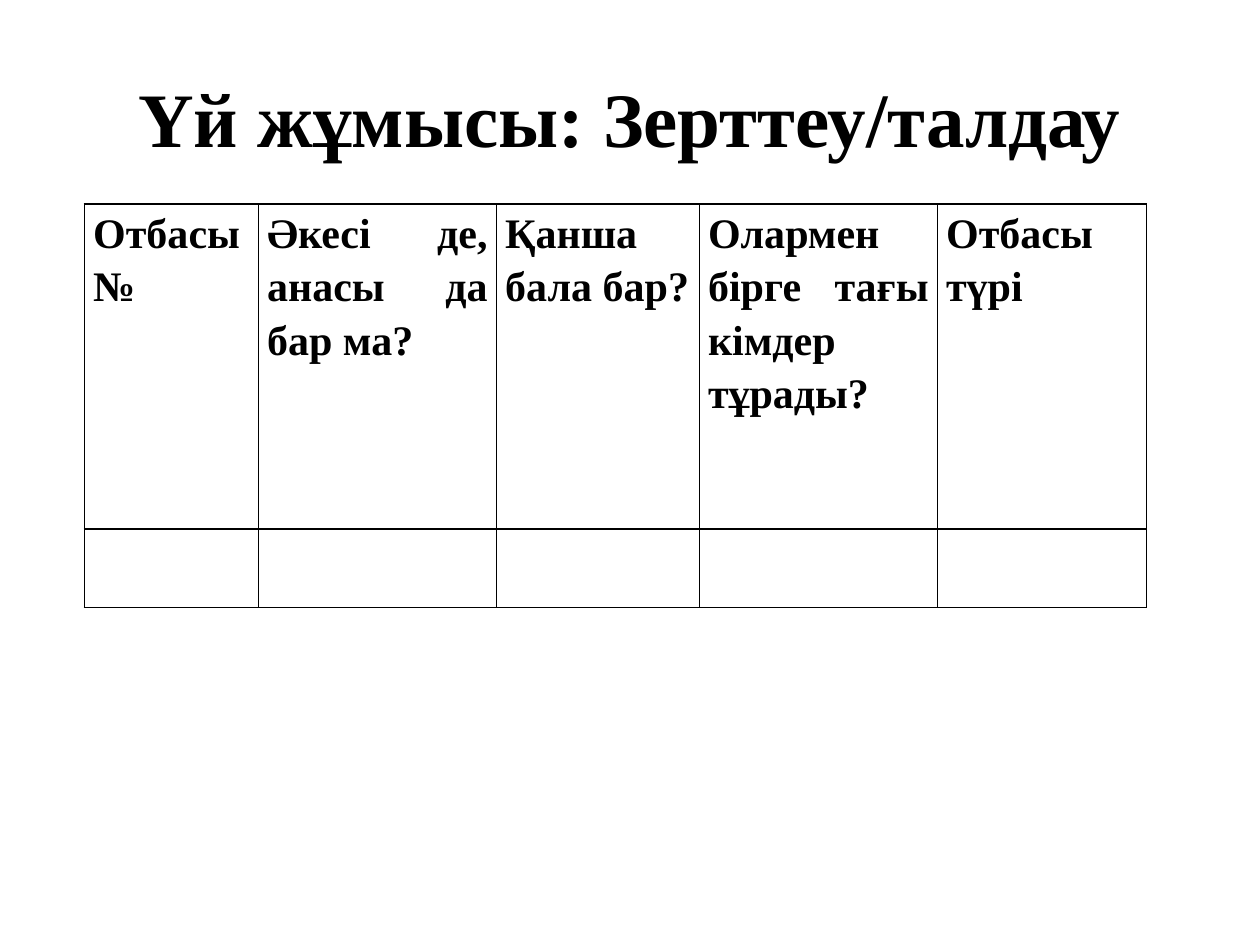
from lxml.etree import SubElement
from pptx import Presentation
from pptx.dml.color import RGBColor
from pptx.enum.text import MSO_ANCHOR, PP_ALIGN
from pptx.oxml.ns import qn
from pptx.util import Inches, Pt

COLORS = {"text": "000000", "border": "000000"}
TITLE_FONT = {"name": "Times New Roman", "size": Pt(44), "bold": True}
CELL_FONT = {"name": "Times New Roman", "size": Pt(24), "bold": True}
CELL_MARGINS = {
    "margin_left": Inches(0.07),
    "margin_right": Inches(0.07),
    "margin_top": 0,
    "margin_bottom": 0,
}
HEADERS = [
    ["Отбасы", "№"],
    ["Әкесі де, анасы да бар ма?"],
    ["Қанша бала бар?"],
    ["Олармен бірге тағы кімдер тұрады?"],
    ["Отбасы түрі"],
]
COLUMN_WIDTHS = [1.38, 1.89, 1.61, 1.89, 1.66]
ROW_HEIGHTS = [2.58, 0.62]


def set_values(target, values):
    for name, value in values.items():
        setattr(target, name, value)


def write_span(para, text, font):
    span = para.add_run()
    span.text = text
    set_values(span.font, font)
    span.font.color.rgb = RGBColor.from_string(COLORS["text"])


def add_title(page, text):
    title = page.shapes.title
    set_values(title, {"left": Inches(0.5), "top": Inches(0.3),
                       "width": Inches(9), "height": Inches(1.25)})
    title.text_frame.vertical_anchor = MSO_ANCHOR.MIDDLE
    para = title.text_frame.paragraphs[0]
    para.alignment = PP_ALIGN.CENTER
    write_span(para, text, TITLE_FONT)


def add_borders(cell):
    properties = cell._tc.get_or_add_tcPr()
    for position, side in enumerate(("a:lnL", "a:lnR", "a:lnT", "a:lnB")):
        line = SubElement(properties, qn(side), w=str(Pt(1)))
        fill = SubElement(line, qn("a:solidFill"))
        SubElement(fill, qn("a:srgbClr"), val=COLORS["border"])
        properties.remove(line)
        properties.insert(position, line)


def fill_cell(cell, lines):
    frame = cell.text_frame
    for number, text in enumerate(lines):
        para = frame.add_paragraph() if number else frame.paragraphs[0]
        para.alignment = PP_ALIGN.JUSTIFY
        para.line_spacing = 1.15
        write_span(para, text, CELL_FONT)


def add_family_table(page):
    table = page.shapes.add_table(
        len(ROW_HEIGHTS), len(COLUMN_WIDTHS), Inches(0.67), Inches(1.62),
        Inches(sum(COLUMN_WIDTHS)), Inches(sum(ROW_HEIGHTS))).table
    set_values(table, {"first_row": False, "horz_banding": False})
    for column, width in zip(table.columns, COLUMN_WIDTHS):
        column.width = Inches(width)
    for row, height in zip(table.rows, ROW_HEIGHTS):
        row.height = Inches(height)
    for cell in table.iter_cells():
        set_values(cell, CELL_MARGINS)
        cell.fill.background()
        add_borders(cell)
    for cell, lines in zip(table.rows[0].cells, HEADERS):
        fill_cell(cell, lines)


def main():
    deck = Presentation()
    set_values(deck, {"slide_width": Inches(10), "slide_height": Inches(7.5)})
    page = deck.slides.add_slide(deck.slide_layouts[5])
    add_title(page, "Үй жұмысы: Зерттеу/талдау")
    add_family_table(page)
    deck.save("out.pptx")


if __name__ == "__main__":
    main()
